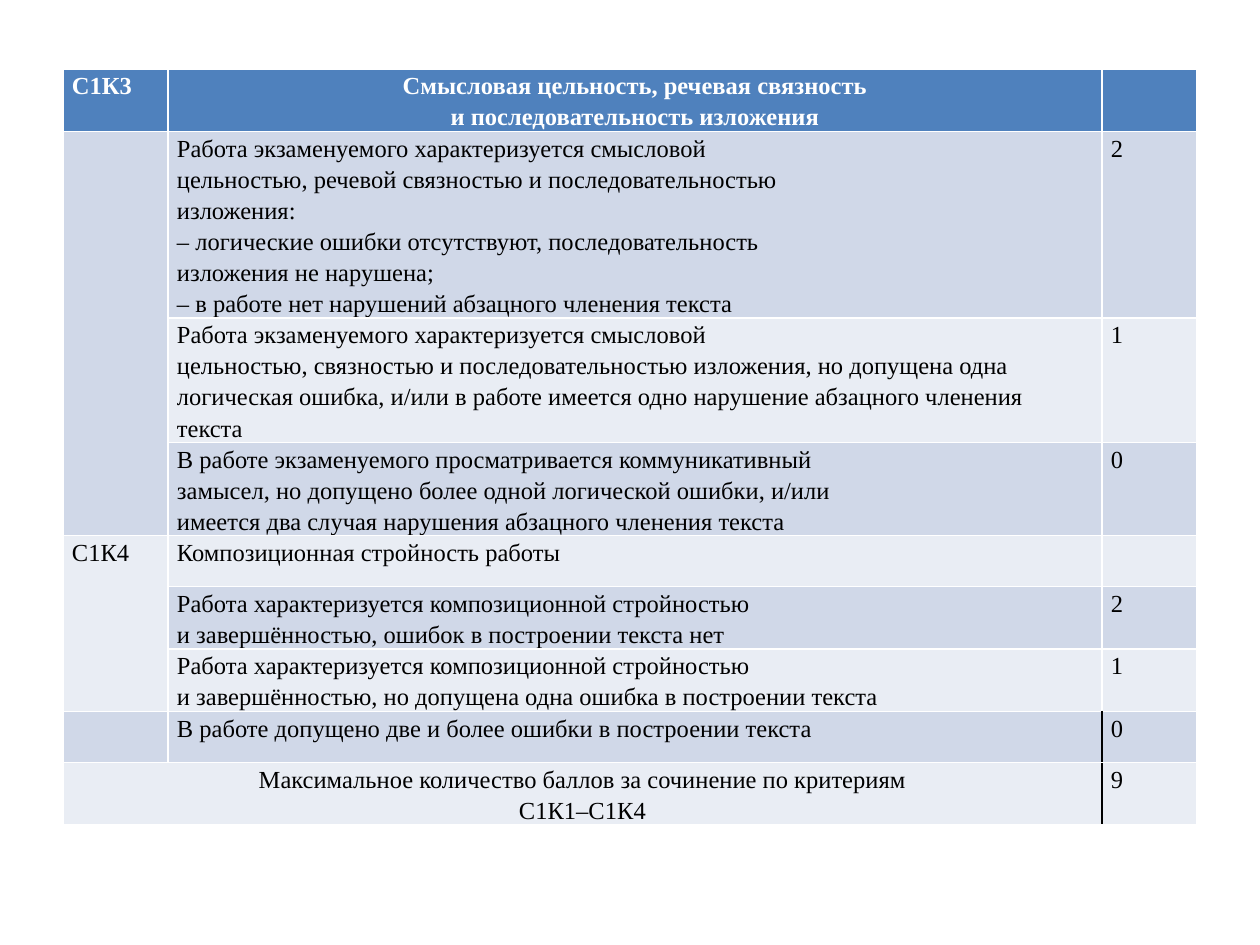
"""Build a slide with the scoring table for criteria С1К3 and С1К4."""
from copy import deepcopy

from lxml import etree
from pptx import Presentation
from pptx import util as u
from pptx.dml.color import RGBColor
from pptx.enum import text
from pptx.oxml import ns

PX = 914400 / 126
BLUE = RGBColor(0x4F, 0x81, 0xBD)
BAND = RGBColor(0xD0, 0xD8, 0xE8)
PALE = RGBColor(0xE9, 0xED, 0xF4)
WHITE = RGBColor(0xFF, 0xFF, 0xFF)
BLACK = RGBColor(0, 0, 0)
COLS = [105, 934, 95]
ROW_H = 51
ROWS = [
    ("С1К3", "Смысловая цельность, речевая связность\nи последовательность изложения", ""),
    ("", "Работа экзаменуемого характеризуется смысловой\n"
         "цельностью, речевой связностью и последовательностью\n"
         "изложения:\n"
         "– логические ошибки отсутствуют, последовательность\n"
         "изложения не нарушена;\n"
         "– в работе нет нарушений абзацного членения текста", "2"),
    ("", "Работа экзаменуемого характеризуется смысловой\n"
         "цельностью, связностью и последовательностью изложения, но допущена одна "
         "логическая ошибка, и/или в работе имеется одно нарушение абзацного членения текста", "1"),
    ("", "В работе экзаменуемого просматривается коммуникативный\n"
         "замысел, но допущено более одной логической ошибки, и/или\n"
         "имеется два случая нарушения абзацного членения текста", "0"),
    ("С1К4", "Композиционная стройность работы", ""),
    ("", "Работа характеризуется композиционной стройностью\n"
         "и завершённостью, ошибок в построении текста нет", "2"),
    ("", "Работа характеризуется композиционной стройностью\n"
         "и завершённостью, но допущена одна ошибка в построении текста", "1"),
    ("", "В работе допущено две и более ошибки в построении текста", "0"),
    ("Максимальное количество баллов за сочинение по критериям\nС1К1–С1К4", "", "9"),
]
MERGES = [((1, 0), (3, 0)), ((4, 0), (6, 0)), ((8, 0), (8, 1))]
CENTERED = [(0, 1), (8, 0)]
BLACK_EDGES = [(7, 1, "a:lnR"), (7, 2, "a:lnL"), (8, 0, "a:lnR"), (8, 1, "a:lnR"), (8, 2, "a:lnL")]


def px(n):
    return u.Emu(int(n * PX))


prs = Presentation()
prs.slide_width, prs.slide_height = px(1260), px(945)
s = prs.slides.add_slide(prs.slide_layouts[6])
tbl = s.shapes.add_table(len(ROWS), len(COLS), px(63), px(69),
                         px(sum(COLS)), px(ROW_H * len(ROWS))).table
for col, w in zip(tbl.columns, COLS):
    col.width = px(w)

for i, row in enumerate(ROWS):
    tbl.rows[i].height = px(ROW_H)
    for j, words in enumerate(row):
        cell = tbl.cell(i, j)
        cell.margin_left = cell.margin_right = px(9)
        cell.margin_top = cell.margin_bottom = 0
        cell.fill.solid()
        cell.fill.fore_color.rgb = BLUE if i == 0 else BAND if i % 2 else PALE
        if not words:
            continue
        p = cell.text_frame.paragraphs[0]
        p.text = words
        p.line_spacing = 1.15
        if (i, j) in CENTERED:
            p.alignment = text.PP_ALIGN.CENTER
        for r in p.runs:
            r.font.name = "Times New Roman"
            r.font.size = u.Pt(14)
            r.font.bold = i == 0
            r.font.color.rgb = WHITE if i == 0 else BLACK
        for br in p._p.findall(ns.qn("a:br")):
            br.append(deepcopy(p.runs[0]._r.rPr))

for first, last in MERGES:
    tbl.cell(*first).merge(tbl.cell(*last))

for i, j, tag in BLACK_EDGES:
    ln = etree.Element(ns.qn(tag), w=str(u.Pt(1)))
    fill = etree.SubElement(ln, ns.qn("a:solidFill"))
    etree.SubElement(fill, ns.qn("a:srgbClr"), val=str(BLACK))
    tbl.cell(i, j)._tc.get_or_add_tcPr().insert(0, ln)

prs.save("out.pptx")
